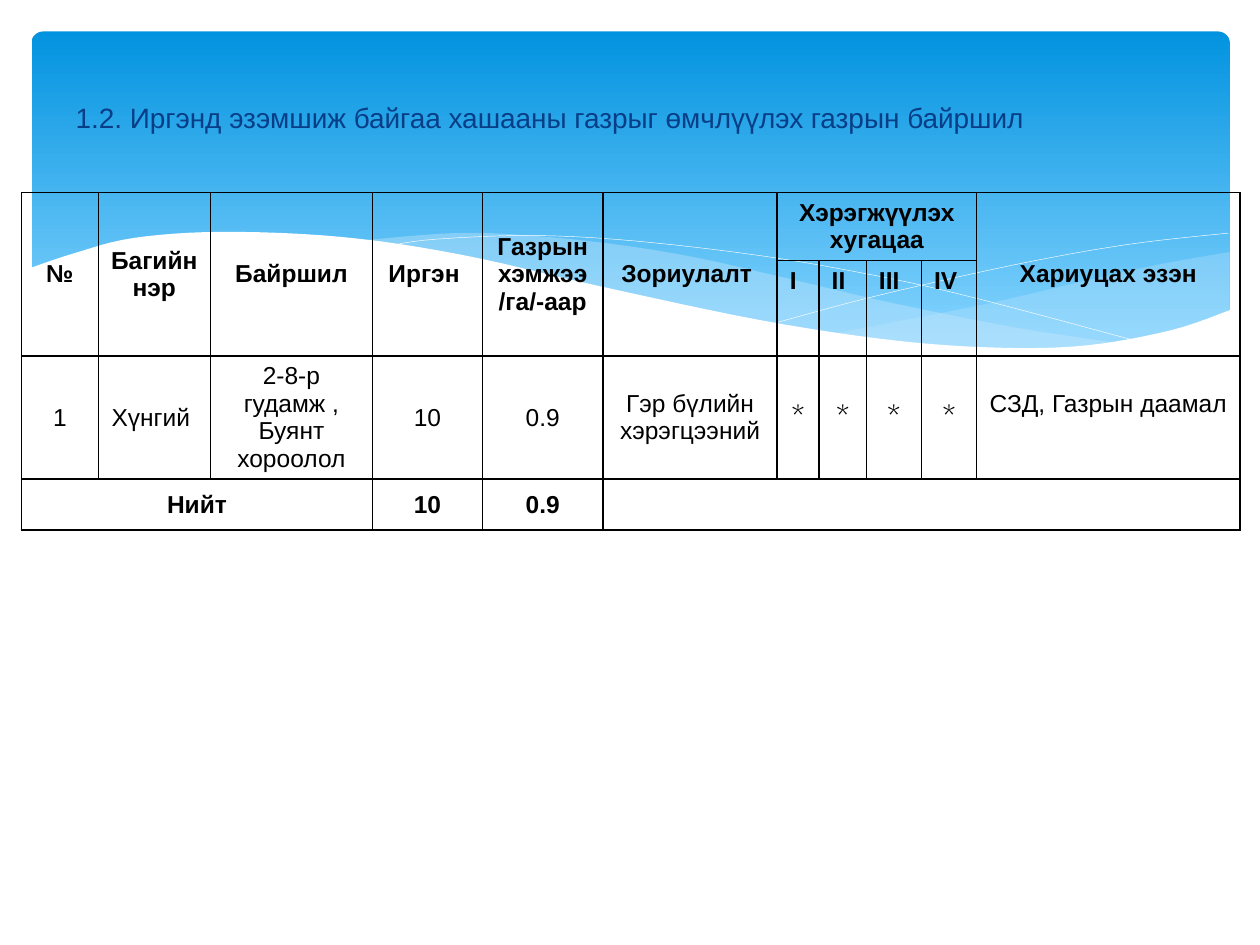
from lxml import etree
from pptx import Presentation
from pptx import util as u
from pptx.dml import color
from pptx.enum import shapes, text
from pptx.oxml import ns

Pt = u.Pt
HUES = {"deep": "0293E0", "sky": "83D3FE", "mist": "C6E7FC",
        "white": "FFFFFF", "navy": "073E87", "black": "000000"}

# Wave curves as knots in points
RIGHT = [[(702.7, 144), (662, 151.2), (620, 160.5), (561, 174.2), (476, 190.8)],
         [(476, 190.8), (527, 197.2), (578, 200), (634.4, 197), (673.2, 188.6),
          (702.7, 177.8)]]
LONG = [[(643, 196.6), (580.3, 187.2), (508.3, 172.8), (452.9, 159.8),
         (399.6, 147.6), (352, 139.7), (302.4, 134.6), (260, 133.2), (206, 137.5)],
        [(206, 137.5), (260.6, 146.2), (323.3, 159.8), (407.5, 178.6),
         (468, 190), (530, 198), (589, 200.2), (643, 196.6)]]
FALL = [[(222.5, 140.4), (247.7, 136.8), (299.5, 134.6), (352, 136.8), (419, 144),
         (478.8, 153.4), (547.2, 167.8), (653, 195.8)]]
RISE = [[(441.4, 185), (500.4, 169.2), (580.3, 151.2), (644.4, 139.7), (702, 133.2)]]
FRONT = [[(703.4, 177), (669.6, 188.6), (621.4, 197.3), (571, 198.7),
          (509.8, 194.4), (434.2, 182.9), (342, 163.4), (262.8, 145.4),
          (195, 135.4), (127.2, 132.5), (76.3, 136), (42.5, 144.7), (16.6, 153.4)],
         [(16.6, 237), (703.4, 237)]]

# Table: sizes in points, then words by row
COLS = [44, 64, 92.8, 62.7, 69, 99.5, 24, 27, 31.5, 31.5, 150.5]
ROWS = [39, 54.3, 70.3, 29.2]
WORDS = [
    ["№", "Багийн нэр", "Байршил", "Иргэн ", "Газрын хэмжээ /га/-аар",
     "Зориулалт ", "Хэрэгжүүлэх хугацаа", "", "", "", "Хариуцах эзэн"],
    [""] * 6 + ["I", "II", "III", "IV", ""],
    ["1", "Хүнгий ", "2-8-р гудамж , Буянт хороолол", "10", "0.9",
     "Гэр бүлийн хэрэгцээний", "*", "*", "*", "*", "СЗД, Газрын даамал"],
    ["Нийт", "", "", "10", "0.9"] + [""] * 6,
]
SPANS = [((0, c), (1, c)) for c in (0, 1, 2, 3, 4, 5, 10)]
SPANS += [((0, 6), (0, 9)), ((3, 0), (3, 2)), ((3, 5), (3, 10))]


def rgb(name):
    return color.RGBColor.from_string(HUES[name])


def style(font, hue, **form):
    for key, value in form.items():
        setattr(font, key, value)
    font.color.rgb = rgb(hue)


def smooth(knots, steps=6):
    """Catmull-Rom curve through the knots."""
    if len(knots) < 3:
        return knots
    ends = [knots[0], *knots, knots[-1]]
    curve = [knots[0]]
    for a, b, c, d in zip(ends, ends[1:], ends[2:], ends[3:]):
        for i in range(1, steps + 1):
            t = i / steps
            curve.append(tuple(
                (2 * q + (r - p) * t + (2 * p - 5 * q + 4 * r - s) * t ** 2
                 + (3 * q - p - 3 * r + s) * t ** 3) / 2
                for p, q, r, s in zip(a, b, c, d)))
    return curve


def draw(slide, parts, closed):
    spots = [(Pt(x), Pt(y)) for part in parts for x, y in smooth(part)]
    pen = slide.shapes.build_freeform(*spots[0], scale=1.0)
    pen.add_line_segments(spots[1:], close=closed)
    form = pen.convert_to_shape()
    form.shadow.inherit = False
    return form


def add_wave(slide, parts, hue, alpha=100):
    wave = draw(slide, parts, True)
    wave.fill.solid()
    wave.fill.fore_color.rgb = rgb(hue)
    wave.line.fill.background()
    if alpha < 100:
        tint = next(wave.element.iter(ns.qn("a:srgbClr")))
        etree.SubElement(tint, ns.qn("a:alpha"), val=str(alpha * 1000))


def add_curve(slide, parts):
    curve = draw(slide, parts, False)
    curve.fill.background()
    curve.line.color.rgb = rgb("white")
    curve.line.width = Pt(0.25)


def add_panel(slide):
    panel = slide.shapes.add_shape(shapes.MSO_SHAPE.ROUNDED_RECTANGLE,
                                   Pt(18), Pt(18), Pt(684.7), Pt(194.4))
    panel.adjustments[0] = 0.034
    panel.shadow.inherit = False
    panel.line.fill.background()
    panel.fill.gradient()
    panel.fill.gradient_angle = 270
    for stop, hue, spot in zip(panel.fill.gradient_stops, ("deep", "sky"), (0, 0.9)):
        stop.color.rgb = rgb(hue)
        stop.position = spot


def set_title(slide, words):
    title = slide.shapes.title
    place = {"left": 36, "top": 54, "width": 648, "height": 428.4}
    for key, value in place.items():
        setattr(title, key, Pt(value))
    title.element.getparent().append(title.element)  # bring to front
    frame = title.text_frame
    frame.text = words
    frame.word_wrap = True
    frame.auto_size = text.MSO_AUTO_SIZE.NONE
    frame.vertical_anchor = text.MSO_ANCHOR.TOP
    line = frame.paragraphs[0]
    line.alignment = text.PP_ALIGN.LEFT
    line.space_before = Pt(3.2)
    style(line.runs[0].font, "navy", name="Arial", size=Pt(16), bold=False)


def add_edges(cell):
    props = cell._tc.get_or_add_tcPr()
    for side in ("lnL", "lnR", "lnT", "lnB"):
        edge = etree.SubElement(props, ns.qn("a:" + side), w=str(Pt(1)))
        fill = etree.SubElement(edge, ns.qn("a:solidFill"))
        etree.SubElement(fill, ns.qn("a:srgbClr"), val=HUES["black"])


def fill_cell(cell, words, row, col):
    add_edges(cell)
    cell.fill.background()
    if not words:
        return
    quarter = row == 1
    star = words == "*"
    cell.text = words
    cell.vertical_anchor = text.MSO_ANCHOR.TOP if quarter else text.MSO_ANCHOR.MIDDLE
    if (row, col) == (2, 10):
        cell.margin_bottom = Pt(19.6)
    line = cell.text_frame.paragraphs[0]
    line.alignment = text.PP_ALIGN.LEFT if quarter else text.PP_ALIGN.CENTER
    style(line.runs[0].font, "black", name="Cabin" if star else "Arial",
          size=Pt(18 if star else 14), bold=row != 2)


def add_grid(slide):
    grid = slide.shapes.add_table(len(ROWS), len(COLS), Pt(12.2), Pt(110),
                                  Pt(sum(COLS)), Pt(sum(ROWS))).table
    grid.first_row = grid.horz_banding = False
    for col, width in zip(grid.columns, COLS):
        col.width = Pt(width)
    for row, height in zip(grid.rows, ROWS):
        row.height = Pt(height)
    for start, end in SPANS:
        grid.cell(*start).merge(grid.cell(*end))
    for r, row in enumerate(WORDS):
        for c, words in enumerate(row):
            fill_cell(grid.cell(r, c), words, r, c)


def main():
    deck = Presentation()
    deck.slide_width, deck.slide_height = Pt(720), Pt(540)
    slide = deck.slides.add_slide(deck.slide_layouts[5])
    # Backdrop
    add_panel(slide)
    add_wave(slide, RIGHT, "mist", 29)
    add_wave(slide, LONG, "mist", 40)
    add_curve(slide, FALL)
    add_curve(slide, RISE)
    add_wave(slide, FRONT, "white")
    # Content
    set_title(slide, "1.2. Иргэнд эзэмшиж байгаа хашааны газрыг "
                     "өмчлүүлэх газрын байршил")
    add_grid(slide)
    deck.save("out.pptx")


if __name__ == "__main__":
    main()
